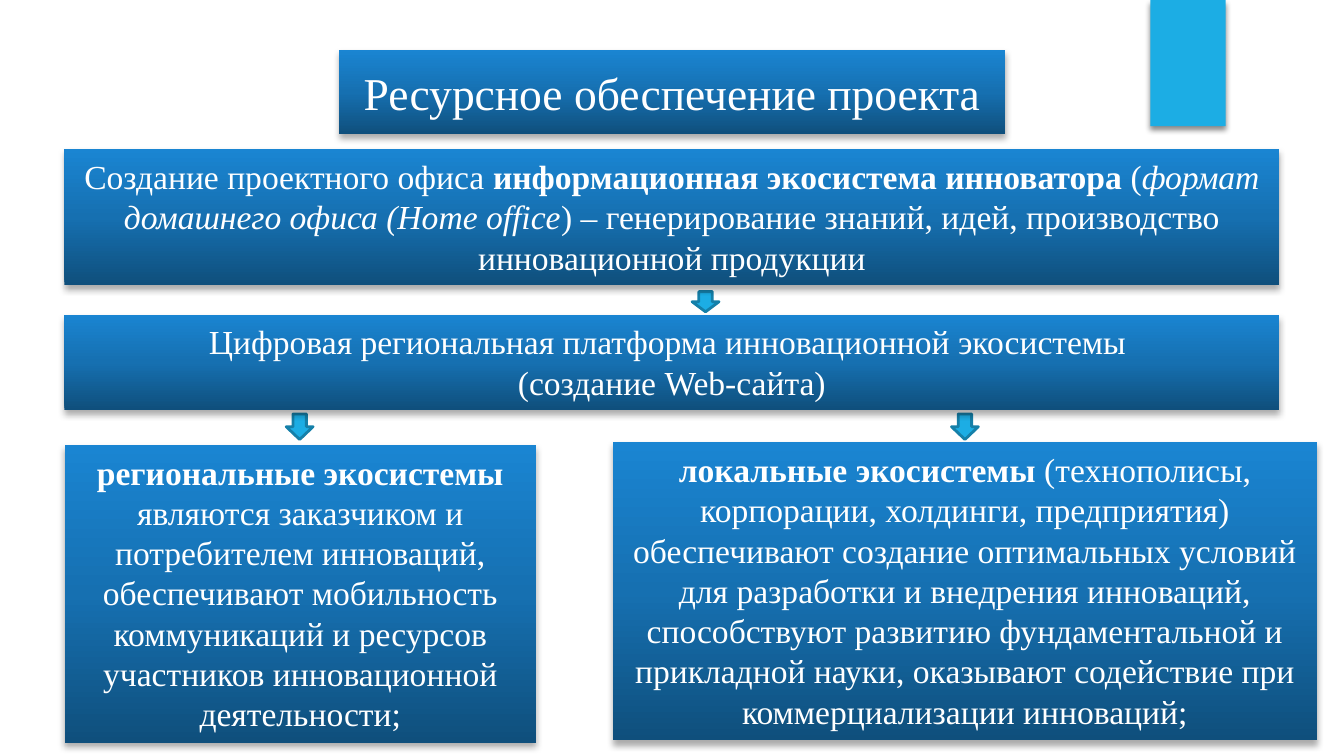
import copy
import dataclasses
import typing

import lxml.etree
import pptx
import pptx.dml.color
import pptx.enum.shapes
import pptx.enum.text
import pptx.oxml.ns
import pptx.util

CELL = 0.1
COLUMNS, ROWS = 100, 56.25
LEFT, FULL_WIDTH = 4.8, 90.4
ACCENT, ACCENT_DARK, WHITE = "1CADE4", "1580A9", "FFFFFF"
GRADIENT = {0: "0F4F7C", 0.5: "1670B1", 1: "1A85D2"}
FONT = "Times New Roman"
PLAIN, BOLD, ITALIC = {}, {"bold": True}, {"italic": True}
Run = tuple[str, dict[str, typing.Any]]


@dataclasses.dataclass
class Area:
    column: float
    row: float
    columns: float
    rows: float


@dataclasses.dataclass
class Shadow:
    opacity: int
    blur: float
    distance: float


@dataclasses.dataclass
class Panel:
    area: Area
    paragraphs: list[list[Run]]


PANEL_SHADOW = Shadow(32, 3.5, 2.2)
TAB_SHADOW = Shadow(45, 3, 2)
TITLE_AREA = Area(25.2, 3.7, 49.6, 6.3)
TITLE = [[("Ресурсное обеспечение проекта", PLAIN)]]
TAB = Area(85.6, 0, 5.6, 9.4)
ARROWS = [
    Area(51.5, 21.7, 2, 1.5),
    Area(21.3, 30.8, 2, 1.9),
    Area(70.8, 30.8, 2, 1.9),
]
PANELS = [
    Panel(Area(LEFT, 11.1, FULL_WIDTH, 10.1), [[
        ("Создание проектного офиса ", PLAIN),
        ("информационная экосистема инноватора ", BOLD),
        ("(", PLAIN),
        ("формат домашнего офиса (Home office", ITALIC),
        (") – генерирование знаний, идей, производство инновационной продукции", PLAIN),
    ]]),
    Panel(Area(LEFT, 23.4, FULL_WIDTH, 7.1), [
        [("Цифровая региональная платформа инновационной экосистемы ", PLAIN)],
        [("(создание Web-сайта)", PLAIN)],
    ]),
    Panel(Area(LEFT, 33.1, 35.1, 22.2), [[
        ("региональные экосистемы ", BOLD),
        ("являются заказчиком и потребителем инноваций, обеспечивают мобильность "
         "коммуникаций и ресурсов участников инновационной деятельности;", PLAIN),
    ]]),
    Panel(Area(45.6, 32.9, 52.4, 22.2), [[
        ("локальные экосистемы ", BOLD),
        ("(технополисы, корпорации, холдинги, предприятия) обеспечивают создание "
         "оптимальных условий для разработки и внедрения инноваций, способствуют "
         "развитию фундаментальной и прикладной науки, оказывают содействие при "
         "коммерциализации инноваций;", PLAIN),
    ]]),
]


def grid(cells: float) -> int:
    return pptx.util.Inches(cells * CELL)


def color(value: str) -> pptx.dml.color.RGBColor:
    return pptx.dml.color.RGBColor.from_string(value)


def apply(target: typing.Any, values: dict[str, typing.Any]) -> None:
    for name, value in values.items():
        setattr(target, name, value)


def place(shape: typing.Any, area: Area) -> None:
    apply(shape, {
        "left": grid(area.column),
        "top": grid(area.row),
        "width": grid(area.columns),
        "height": grid(area.rows),
    })


def add_shape(slide: typing.Any, kind: typing.Any, area: Area) -> typing.Any:
    shape = slide.shapes.add_shape(kind, 0, 0, 0, 0)
    place(shape, area)
    return shape


def fill_solid(shape: typing.Any, value: str) -> None:
    shape.fill.solid()
    shape.fill.fore_color.rgb = color(value)


def fill_gradient(shape: typing.Any) -> None:
    shape.fill.gradient()
    shape.fill.gradient_angle = 90
    stop_list = shape.element.spPr.find(".//" + pptx.oxml.ns.qn("a:gsLst"))
    stop_list.append(copy.deepcopy(stop_list[0]))
    for stop, (position, value) in zip(shape.fill.gradient_stops, GRADIENT.items()):
        stop.position = position
        stop.color.rgb = color(value)


def cast_shadow(shape: typing.Any, shadow: Shadow) -> None:
    qn = pptx.oxml.ns.qn
    shape.shadow.inherit = False
    effects = shape.element.spPr.find(qn("a:effectLst"))
    outer = lxml.etree.SubElement(effects, qn("a:outerShdw"), {
        "blurRad": str(pptx.util.Pt(shadow.blur)),
        "dist": str(pptx.util.Pt(shadow.distance)),
        "dir": str(90 * 60000),
        "rotWithShape": "0",
    })
    tint = lxml.etree.SubElement(outer, qn("a:srgbClr"), {"val": "000000"})
    lxml.etree.SubElement(tint, qn("a:alpha"), {"val": str(shadow.opacity * 1000)})


def write(frame: typing.Any, paragraphs: list[list[Run]], size: float) -> None:
    for index, runs in enumerate(paragraphs):
        paragraph = frame.add_paragraph() if index else frame.paragraphs[0]
        paragraph.alignment = pptx.enum.text.PP_ALIGN.CENTER
        for text, style in runs:
            run = paragraph.add_run()
            run.text = text
            apply(run.font, {"name": FONT, "size": pptx.util.Pt(size)} | style)
            run.font.color.rgb = color(WHITE)


def format_panel(shape: typing.Any, paragraphs: list[list[Run]], size: float,
                 frame_values: dict[str, typing.Any]) -> None:
    fill_gradient(shape)
    shape.line.fill.background()
    cast_shadow(shape, PANEL_SHADOW)
    apply(shape.text_frame, {
        "word_wrap": True,
        "vertical_anchor": pptx.enum.text.MSO_ANCHOR.MIDDLE,
    } | frame_values)
    write(shape.text_frame, paragraphs, size)


def draw_title(slide: typing.Any) -> None:
    margin = grid(1)
    place(slide.shapes.title, TITLE_AREA)
    format_panel(slide.shapes.title, TITLE, 24.4, {
        "auto_size": pptx.enum.text.MSO_AUTO_SIZE.NONE,
        "margin_left": margin,
        "margin_right": margin,
        "margin_top": margin,
        "margin_bottom": margin,
    })


def draw_panel(slide: typing.Any, panel: Panel) -> None:
    shape = add_shape(slide, pptx.enum.shapes.MSO_SHAPE.RECTANGLE, panel.area)
    format_panel(shape, panel.paragraphs, 18, {
        "auto_size": pptx.enum.text.MSO_AUTO_SIZE.SHAPE_TO_FIT_TEXT,
        "vertical_anchor": pptx.enum.text.MSO_ANCHOR.TOP,
    })


def draw_tab(slide: typing.Any) -> None:
    shape = add_shape(slide, pptx.enum.shapes.MSO_SHAPE.RECTANGLE, TAB)
    fill_solid(shape, ACCENT)
    shape.line.fill.background()
    cast_shadow(shape, TAB_SHADOW)


def draw_arrow(slide: typing.Any, area: Area) -> None:
    shape = add_shape(slide, pptx.enum.shapes.MSO_SHAPE.DOWN_ARROW, area)
    fill_solid(shape, ACCENT)
    shape.line.color.rgb = color(ACCENT_DARK)
    shape.line.width = pptx.util.Pt(1.5)
    shape.shadow.inherit = False


def main() -> None:
    presentation = pptx.Presentation()
    apply(presentation, {"slide_width": grid(COLUMNS), "slide_height": grid(ROWS)})
    slide = presentation.slides.add_slide(presentation.slide_layouts[5])
    draw_tab(slide)
    for area in ARROWS:
        draw_arrow(slide, area)
    draw_title(slide)
    for panel in PANELS:
        draw_panel(slide, panel)
    presentation.save("out.pptx")


if __name__ == "__main__":
    main()
